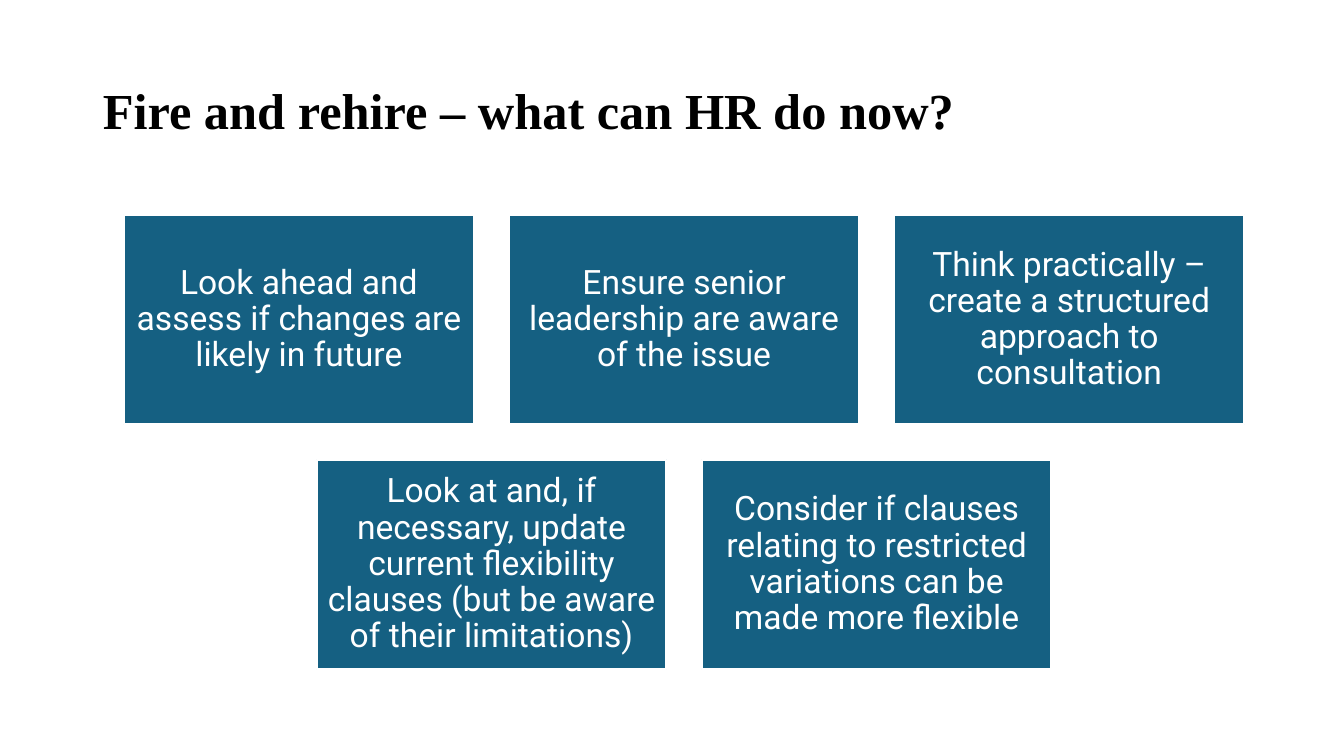
"""Build the slide on what HR can do now about fire and rehire."""
from pptx import Presentation
from pptx.dml.color import RGBColor
from pptx.enum.shapes import MSO_SHAPE
from pptx.enum.text import MSO_ANCHOR, MSO_AUTO_SIZE, PP_ALIGN
from pptx.util import Inches, Pt

RECTANGLE = MSO_SHAPE.RECTANGLE
MIDDLE = MSO_ANCHOR.MIDDLE
NO_FIT = MSO_AUTO_SIZE.NONE
LEFT, CENTER = PP_ALIGN.LEFT, PP_ALIGN.CENTER

BLACK = RGBColor(0x00, 0x00, 0x00)
WHITE = RGBColor(0xFF, 0xFF, 0xFF)
BLUE = RGBColor(0x15, 0x60, 0x82)

SLIDE_W, SLIDE_H = 13.33, 7.5
TITLE_FONT = {"name": "Times New Roman", "size": Pt(36), "bold": True}
CARD_FONT = {"name": "Roboto", "size": Pt(24), "bold": False}
CARD_W, CARD_H, GAP = 3.47, 2.08, 0.35
GRID_TOP, GRID_CENTER = 2.13, 6.785

ROWS = [
    [
        "Look ahead and assess if changes are likely in future",
        "Ensure senior leadership are aware of the issue",
        "Think practically – create a structured approach to consultation",
    ],
    [
        "Look at and, if necessary, update current flexibility clauses "
        "(but be aware of their limitations)",
        "Consider if clauses relating to restricted variations can be "
        "made more flexible",
    ],
]


def write(sp, text, font, color, align):
    tf = sp.text_frame
    tf.text = text
    tf.word_wrap = True
    tf.auto_size = NO_FIT
    tf.vertical_anchor = MIDDLE
    p = tf.paragraphs[0]
    p.alignment = align
    p.line_spacing = 0.9
    r = p.runs[0]
    for name, value in font.items():
        setattr(r.font, name, value)
    r.font.color.rgb = color
    return tf


prs = Presentation()
prs.slide_width, prs.slide_height = Inches(SLIDE_W), Inches(SLIDE_H)
s = prs.slides.add_slide(prs.slide_layouts[5])

title = s.shapes.title
title.left, title.top = Inches(0.92), Inches(0.4)
title.width, title.height = Inches(11.73), Inches(1.45)
write(title, "Fire and rehire – what can HR do now?", TITLE_FONT, BLACK, LEFT)

for row, texts in enumerate(ROWS):
    row_w = len(texts) * (CARD_W + GAP) - GAP
    top = GRID_TOP + row * (CARD_H + GAP)
    for col, text in enumerate(texts):
        left = GRID_CENTER - row_w / 2 + col * (CARD_W + GAP)
        sp = s.shapes.add_shape(
            RECTANGLE, Inches(left), Inches(top), Inches(CARD_W), Inches(CARD_H)
        )
        sp.shadow.inherit = False
        sp.fill.solid()
        sp.fill.fore_color.rgb = BLUE
        sp.line.color.rgb = WHITE
        sp.line.width = Pt(1.5)
        tf = write(sp, text, CARD_FONT, WHITE, CENTER)
        for side in ("left", "top", "right", "bottom"):
            setattr(tf, f"margin_{side}", Inches(0.1))

prs.save("out.pptx")
